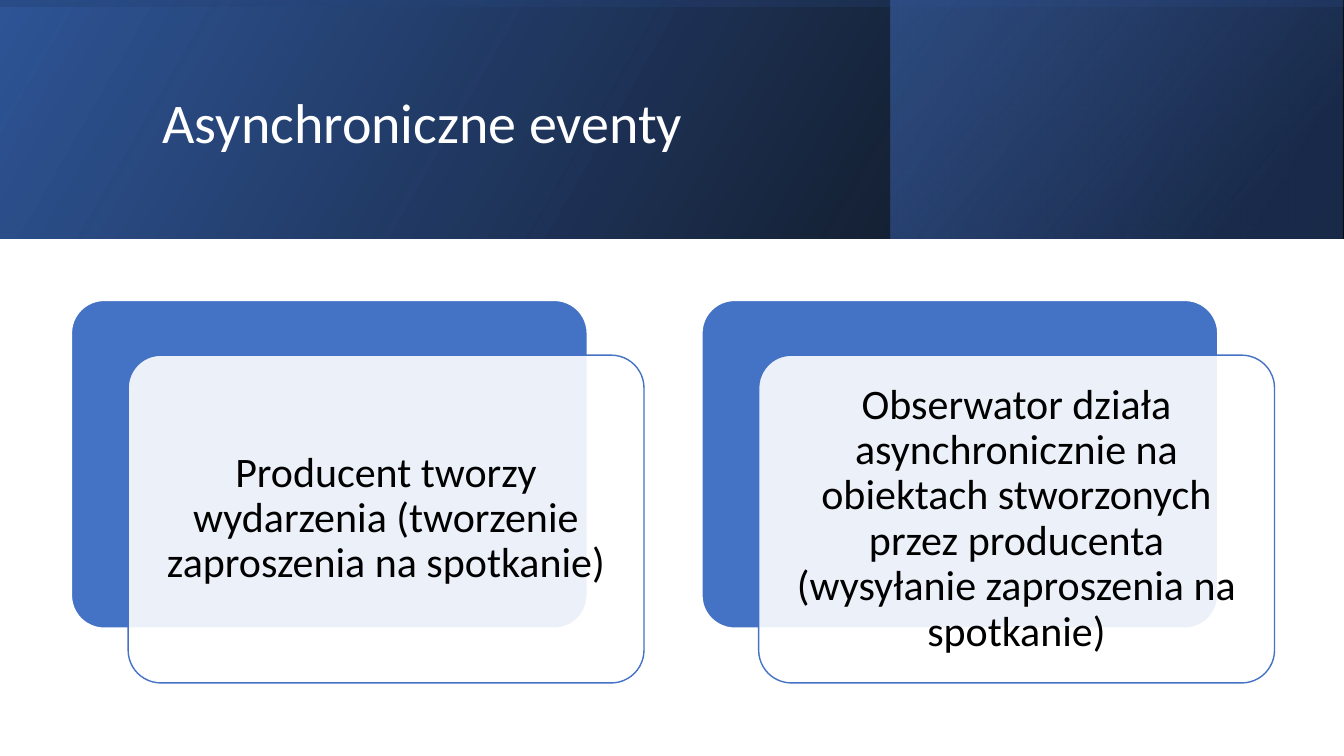
from pptx import Presentation
from pptx.dml.color import RGBColor
from pptx.enum.shapes import MSO_SHAPE
from pptx.enum.text import MSO_ANCHOR, MSO_AUTO_SIZE, PP_ALIGN
from pptx.oxml import parse_xml
from pptx.oxml.ns import nsdecls, qn
from pptx.util import Cm, Pt
from lxml.etree import SubElement

COLORS = {
    "white": "FFFFFF",
    "black": "000000",
    "blue": "4472C4",
    "deep": "2F5597",
    "navy": "203864",
}
FONT = "Calibri"
SLIDE_W, SLIDE_H, BAND_H = 33.87, 19.05, 6.02

# Header bands: left, top, width, height, rotation, angle, stops
# Each stop: position %, colour, opacity %
BANDS = [
    (0, 0, SLIDE_W, BAND_H, 0, 330, [(0, "black", 96), (100, "deep", 100)]),
    (22.45, 0, 11.38, BAND_H, 0, 320, [(19, "navy", 68), (100, "blue", 48)]),
    ((SLIDE_W - BAND_H) / 2, (BAND_H - SLIDE_W) / 2, BAND_H, SLIDE_W, 270, 350,
     [(23, "deep", 16), (99, "black", 45)]),
]

# Cards: a blue plate with a pale panel shifted down and right
CARD_LEFT, CARD_TOP, CARD_PITCH = 1.8, 7.57, 15.89
CARD_W, CARD_H = 13, 8.26
SHIFT_X, SHIFT_Y = 1.43, 1.38
CARD_TEXTS = [
    "Producent tworzy wydarzenia (tworzenie zaproszenia na spotkanie)",
    "Obserwator działa asynchronicznie na obiektach stworzonych przez "
    "producenta (wysyłanie zaproszenia na spotkanie)",
]


def rgb(name):
    return RGBColor.from_string(COLORS[name])


def add_plain_shape(slide, kind, left, top, width, height):
    sp = slide.shapes.add_shape(kind, Cm(left), Cm(top), Cm(width), Cm(height))
    sp.shadow.inherit = False
    return sp


def add_band(slide, left, top, width, height, rotation, angle, stops):
    sp = add_plain_shape(slide, MSO_SHAPE.RECTANGLE, left, top, width, height)
    sp.rotation = rotation
    sp.line.fill.background()
    props = sp._element.spPr
    props.find(qn("a:xfrm")).set("flipH", "1")
    stop_xml = "".join(
        f'<a:gs pos="{pos * 1000}"><a:srgbClr val="{COLORS[color]}">'
        f'<a:alpha val="{opacity * 1000}"/></a:srgbClr></a:gs>'
        for pos, color, opacity in stops
    )
    gradient = parse_xml(
        f'<a:gradFill {nsdecls("a")} rotWithShape="1"><a:gsLst>{stop_xml}</a:gsLst>'
        f'<a:lin ang="{angle * 60000}" scaled="0"/></a:gradFill>'
    )
    props.find(qn("a:prstGeom")).addnext(gradient)


def format_text(tf, text, size, color, align):
    tf.text = text
    tf.word_wrap = True
    tf.auto_size = MSO_AUTO_SIZE.NONE
    tf.vertical_anchor = MSO_ANCHOR.MIDDLE
    p = tf.paragraphs[0]
    p.alignment = align
    p.line_spacing = 0.9
    p.font.name = FONT
    p.font.size = Pt(size)
    p.font.color.rgb = rgb(color)


def place_title(slide, text):
    title = slide.shapes.title
    title.left, title.top = Cm(3.84), Cm(0.97)
    title.width, title.height = Cm(27), Cm(4.37)
    format_text(title.text_frame, text, 40, "white", PP_ALIGN.LEFT)
    # Bring the title in front of the bands
    slide.shapes._spTree.append(title._element)


def add_plate(slide, left, top, fill, line):
    sp = add_plain_shape(slide, MSO_SHAPE.ROUNDED_RECTANGLE, left, top, CARD_W, CARD_H)
    sp.adjustments[0] = 0.1
    sp.fill.solid()
    sp.fill.fore_color.rgb = rgb(fill)
    sp.line.color.rgb = rgb(line)
    sp.line.width = Pt(1)
    return sp


def add_card(slide, left, text):
    add_plate(slide, left, CARD_TOP, "blue", "white")
    panel = add_plate(slide, left + SHIFT_X, CARD_TOP + SHIFT_Y, "white", "blue")
    color = panel._element.spPr.find(qn("a:solidFill")).find(qn("a:srgbClr"))
    SubElement(color, qn("a:alpha")).set("val", "90000")
    tf = panel.text_frame
    tf.margin_left = tf.margin_right = tf.margin_top = tf.margin_bottom = Cm(0.3)
    format_text(tf, text, 30, "black", PP_ALIGN.CENTER)


def main():
    prs = Presentation()
    prs.slide_width, prs.slide_height = Cm(SLIDE_W), Cm(SLIDE_H)
    slide = prs.slides.add_slide(prs.slide_layouts[5])

    # Header
    for band in BANDS:
        add_band(slide, *band)
    place_title(slide, "Asynchroniczne eventy")

    # Cards
    for i, text in enumerate(CARD_TEXTS):
        add_card(slide, CARD_LEFT + i * CARD_PITCH, text)

    prs.save("out.pptx")


if __name__ == "__main__":
    main()
